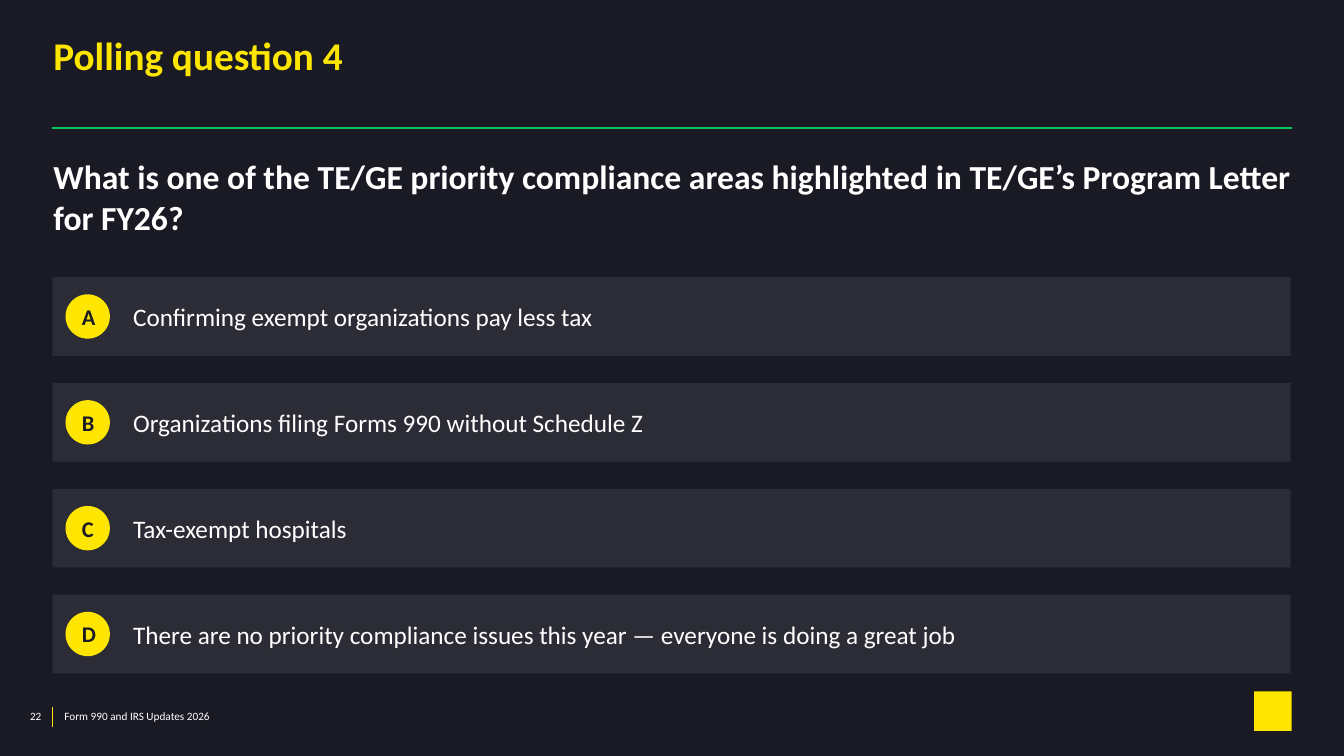
from dataclasses import dataclass

from lxml.etree import SubElement
from pptx import Presentation
from pptx.dml.color import RGBColor
from pptx.enum.shapes import MSO_CONNECTOR, MSO_SHAPE
from pptx.enum.text import MSO_ANCHOR, MSO_AUTO_SIZE, PP_ALIGN
from pptx.oxml.ns import qn
from pptx.util import Pt

TITLE = "Polling question 4"
QUESTION = (
    "What is one of the TE/GE priority compliance areas highlighted in "
    "TE/GE’s Program Letter for FY26?"
)
ANSWERS = {
    "A": "Confirming exempt organizations pay less tax",
    "B": "Organizations filing Forms 990 without Schedule Z",
    "C": "Tax-exempt hospitals",
    "D": "There are no priority compliance issues this year — everyone is doing a great job",
}
FOOTER = "Form 990 and IRS Updates 2026"
PAGE_NUMBER = "22"


@dataclass(frozen=True)
class Theme:
    font: str = "Calibri"
    background: str = "1A1A24"
    accent: str = "FFE600"
    rule: str = "00C864"
    bar: str = "747480"
    bar_opacity: int = 20
    text: str = "FFFFFF"
    title_size: int = 28
    question_size: int = 24
    answer_size: int = 18
    letter_size: int = 16
    footer_size: int = 8


THEME = Theme()
EMU_PER_PX = 9144  # 100 px to the inch

LEFT, RIGHT = 52, 1281
TEXT_LEFT, CONTENT_WIDTH = 53, 1228
BAR_TOP, BAR_HEIGHT, BAR_PITCH = 275, 78, 105
BADGE_LEFT, BADGE_SIZE = 65, 44


def px(*lengths):
    return [length * EMU_PER_PX for length in lengths]


def color(value):
    return RGBColor.from_string(value)


def write(box, text, *, size, fill=THEME.text, bold=False, align=PP_ALIGN.LEFT,
          anchor=MSO_ANCHOR.TOP, insets=(0, 0, 0, 0), line_spacing=None):
    """Fill a box with one formatted paragraph; insets are left, top, right, bottom."""
    frame = box.text_frame
    frame.word_wrap = True
    frame.auto_size = MSO_AUTO_SIZE.NONE
    frame.vertical_anchor = anchor
    (frame.margin_left, frame.margin_top,
     frame.margin_right, frame.margin_bottom) = px(*insets)
    para = frame.paragraphs[0]
    para.alignment = align
    if line_spacing:
        para.line_spacing = line_spacing
    span = para.add_run()
    span.text = text
    span.font.name = THEME.font
    span.font.size = Pt(size)
    span.font.bold = bold
    span.font.color.rgb = color(fill)


def add_text(slide, bounds, text, **style):
    write(slide.shapes.add_textbox(*px(*bounds)), text, **style)


def add_block(slide, kind, bounds, fill, opacity=100):
    """Add a borderless preset shape with an opacity in percent."""
    block = slide.shapes.add_shape(kind, *px(*bounds))
    block.shadow.inherit = False
    block.line.fill.background()
    block.fill.solid()
    block.fill.fore_color.rgb = color(fill)
    if opacity < 100:
        shade = block._element.spPr.find(qn("a:solidFill"))[0]
        SubElement(shade, qn("a:alpha"), val=str(opacity * 1000))
    return block


def add_line(slide, ends, fill, width):
    line = slide.shapes.add_connector(MSO_CONNECTOR.STRAIGHT, *px(*ends))
    line.line.color.rgb = color(fill)
    line.line.width = Pt(width)
    SubElement(line._element.spPr, qn("a:effectLst"))


def add_footer(slide):
    add_block(slide, MSO_SHAPE.RECTANGLE, (1244, 686, 37, 39), THEME.accent)
    add_line(slide, (LEFT, 701, LEFT, 721), THEME.accent, 1)
    add_text(slide, (54, 704, 600, 13), FOOTER,
             size=THEME.footer_size, insets=(10, 0, 0, 0))
    add_text(slide, (11, 704, 40, 13), PAGE_NUMBER, size=THEME.footer_size,
             align=PP_ALIGN.RIGHT, insets=(0, 0, 10, 0))


def add_heading(slide):
    add_line(slide, (LEFT, 127, RIGHT, 127), THEME.rule, 2)
    title = slide.shapes.title
    title.left, title.top, title.width, title.height = px(
        TEXT_LEFT, 38, CONTENT_WIDTH, 51)
    write(title, TITLE, size=THEME.title_size, fill=THEME.accent, bold=True,
          line_spacing=0.85)
    add_text(slide, (TEXT_LEFT, 155, CONTENT_WIDTH, 81), QUESTION,
             size=THEME.question_size, bold=True)


def add_answers(slide):
    for row, (letter, answer) in enumerate(ANSWERS.items()):
        top = BAR_TOP + row * BAR_PITCH
        bar = add_block(slide, MSO_SHAPE.RECTANGLE,
                        (LEFT, top, CONTENT_WIDTH, BAR_HEIGHT),
                        THEME.bar, THEME.bar_opacity)
        write(bar, answer, size=THEME.answer_size,
              anchor=MSO_ANCHOR.MIDDLE, insets=(80, 0, 0, 0))
        badge_top = top + (BAR_HEIGHT - BADGE_SIZE) // 2
        badge = add_block(slide, MSO_SHAPE.OVAL,
                          (BADGE_LEFT, badge_top, BADGE_SIZE, BADGE_SIZE),
                          THEME.accent)
        write(badge, letter, size=THEME.letter_size, fill=THEME.background,
              bold=True, align=PP_ALIGN.CENTER, anchor=MSO_ANCHOR.MIDDLE,
              insets=(10, 10, 10, 10))


def main():
    deck = Presentation()
    deck.slide_width, deck.slide_height = px(1333, 750)
    title_only = deck.slide_layouts[5]
    slide = deck.slides.add_slide(title_only)
    slide.background.fill.solid()
    slide.background.fill.fore_color.rgb = color(THEME.background)
    add_footer(slide)
    add_heading(slide)
    add_answers(slide)
    deck.save("out.pptx")


if __name__ == "__main__":
    main()
